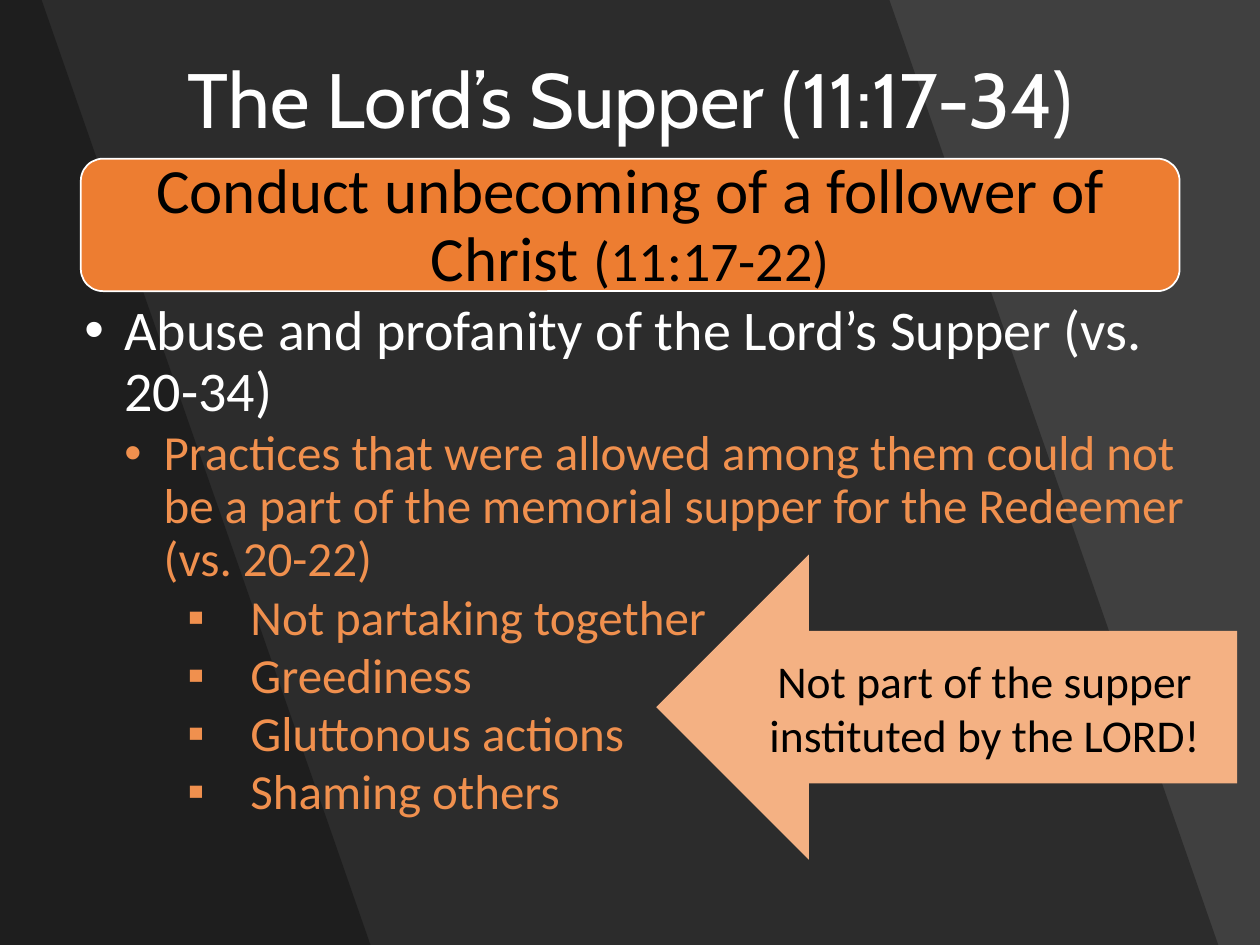
from dataclasses import dataclass

from lxml.etree import SubElement
from pptx import Presentation
from pptx.dml.color import RGBColor
from pptx.enum.shapes import MSO_SHAPE as Preset
from pptx.enum.text import MSO_ANCHOR as Anchor, PP_ALIGN as Align
from pptx.oxml.ns import qn
from pptx.util import Cm, Pt

COLORS = {
    "background": "404040",
    "shade": "000000",
    "light": "FFFFFF",
    "dark": "000000",
    "banner": "ED7D31",
    "detail": "F0904E",
    "arrow": "F4B183",
}
WIDTH, HEIGHT = 25.4, 19.05
SLANT = 6.63  # how far each shaded edge leans to the right


@dataclass
class Area:
    left: float
    top: float
    width: float
    height: float

    def lengths(self) -> list:
        return [Cm(value) for value in (self.left, self.top, self.width, self.height)]


@dataclass
class Style:
    size: int
    color: str
    font: str = "Calibri"


@dataclass
class Level:
    margin: float
    hanging: float
    bullet: str
    style: Style


@dataclass
class Point:
    text: str
    level: int


LEVELS = [
    Level(0.81, 0.81, "•", Style(32, "light")),
    Level(1.6, 0.79, "•", Style(28, "detail")),
    Level(3.35, 1.27, "▪", Style(28, "detail")),
]
POINTS = [
    Point("Abuse and profanity of the Lord’s Supper (vs. 20-34)", 0),
    Point("Practices that were allowed among them could not be a part of the "
          "memorial supper for the Redeemer (vs. 20-22)", 1),
    Point("Not partaking together", 2),
    Point("Greediness", 2),
    Point("Gluttonous actions", 2),
    Point("Shaming others", 2),
]


def rgb(name: str) -> RGBColor:
    return RGBColor.from_string(COLORS[name])


def format_span(span, style: Style) -> None:
    span.font.size = Pt(style.size)
    span.font.name = style.font
    span.font.color.rgb = rgb(style.color)


def add_shade(shapes, top_edge: float) -> None:
    """Darken everything left of a slanted edge."""
    builder = shapes.build_freeform(0, 0)
    corners = [(top_edge, 0), (top_edge + SLANT, HEIGHT), (0, HEIGHT)]
    builder.add_line_segments([(Cm(x), Cm(y)) for x, y in corners], close=True)
    shade = builder.convert_to_shape()
    shade.shadow.inherit = False
    shade.line.fill.background()
    shade.fill.solid()
    shade.fill.fore_color.rgb = rgb("shade")
    color = shade.fill._xPr.find(f".//{qn('a:srgbClr')}")
    SubElement(color, qn("a:alpha"), val="30000")


def add_block(shapes, preset, area: Area, color: str):
    block = shapes.add_shape(preset, *area.lengths())
    block.shadow.inherit = False
    block.fill.solid()
    block.fill.fore_color.rgb = rgb(color)
    block.line.fill.background()
    return block


def add_text(shapes, area: Area, anchor=Anchor.MIDDLE):
    frame = shapes.add_textbox(*area.lengths()).text_frame
    frame.word_wrap = True
    frame.vertical_anchor = anchor
    return frame


def center_text(frame, text: str, style: Style, spacing: float):
    frame.text = text
    para = frame.paragraphs[0]
    para.alignment = Align.CENTER
    para.line_spacing = spacing
    format_span(para.runs[0], style)
    return para


def write_point(para, point: Point) -> None:
    level = LEVELS[point.level]
    para.text = point.text
    para.level = point.level
    para.line_spacing = 0.9
    para.space_before = Pt(3)
    format_span(para.runs[0], level.style)
    properties = para._p.get_or_add_pPr()
    properties.set("marL", str(Cm(level.margin)))
    properties.set("indent", str(-Cm(level.hanging)))
    SubElement(properties, qn("a:buFont"), typeface="Arial")
    SubElement(properties, qn("a:buChar"), char=level.bullet)


def main() -> None:
    deck = Presentation()
    deck.slide_width, deck.slide_height = Cm(WIDTH), Cm(HEIGHT)
    page = deck.slides.add_slide(deck.slide_layouts[6])
    shapes = page.shapes

    # Background with two slanted shades
    page.background.fill.solid()
    page.background.fill.fore_color.rgb = rgb("background")
    for top_edge in (17.93, 0.84):
        add_shade(shapes, top_edge)

    # Title
    title = add_text(shapes, Area(1.19, 0.48, 23.04, 3.23))
    center_text(title, "The Lord’s Supper (11:17-34)", Style(44, "light", "Cabin"), 0.9)

    # Bulleted points
    body = add_text(shapes, Area(1.45, 5.97, 22.78, 13.08), Anchor.TOP)
    for index, point in enumerate(POINTS):
        para = body.add_paragraph() if index else body.paragraphs[0]
        write_point(para, point)

    # Banner with its heading
    group = shapes.add_group_shape().shapes
    banner = add_block(group, Preset.ROUNDED_RECTANGLE, Area(1.63, 3.2, 22.15, 2.67), "banner")
    banner.line.color.rgb = rgb("light")
    banner.line.width = Pt(1)
    heading = add_text(group, Area(1.19, 3.3, 23.04, 2.57))
    heading.margin_left = heading.margin_right = Cm(0.5)
    heading.margin_top = heading.margin_bottom = Cm(0.5)
    para = center_text(heading, "Conduct unbecoming of a follower of Christ ",
                       Style(36, "dark"), 0.9)
    verses = para.add_run()
    verses.text = "(11:17-22)"
    format_span(verses, Style(32, "dark"))

    # Arrow with the verdict
    arrow = add_block(shapes, Preset.LEFT_ARROW, Area(13.23, 11.18, 11.71, 6.15), "arrow")
    arrow.text_frame.word_wrap = True
    arrow.text_frame.vertical_anchor = Anchor.MIDDLE
    center_text(arrow.text_frame, "Not part of the supper instituted by the LORD!",
                Style(26, "dark"), 1.0)

    deck.save("out.pptx")


if __name__ == "__main__":
    main()
